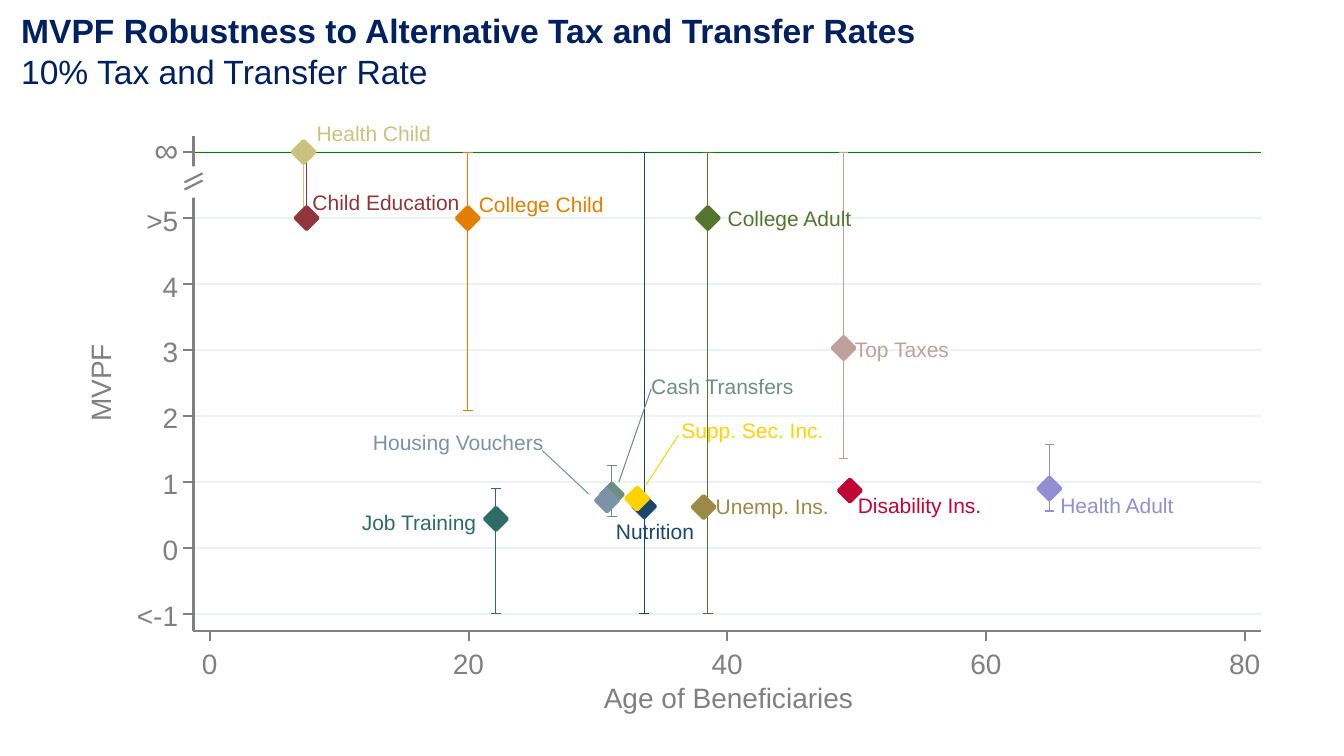
from dataclasses import dataclass
from typing import Any, Optional

from lxml import etree
from pptx import Presentation
from pptx.dml.color import RGBColor
from pptx.enum.shapes import MSO_CONNECTOR, MSO_SHAPE
from pptx.enum.text import MSO_AUTO_SIZE
from pptx.oxml.ns import qn
from pptx.util import Pt

LINE = MSO_CONNECTOR.STRAIGHT
RECT, DIAMOND = MSO_SHAPE.RECTANGLE, MSO_SHAPE.DIAMOND
GROW = MSO_AUTO_SIZE.SHAPE_TO_FIT_TEXT


@dataclass(frozen=True)
class Theme:
    font: str = "Arial"
    axis: str = "808080"
    grid: str = "EAF2F3"
    top: str = "008000"
    title: str = "002060"
    back: str = "FFFFFF"
    head: float = 24
    tick: float = 20
    note: float = 15
    thin: float = 0.75
    mid: float = 1.5
    edge: float = 2.5
    wide: float = 3


@dataclass(frozen=True)
class Policy:
    name: str
    color: str
    age: float
    value: float
    low: float
    high: float
    left: float  # label box
    top: float
    width: float
    lead: Optional[tuple[float, float, float, float]] = None


T = Theme()
FRAME = {"margin_left": 0, "margin_right": 0, "margin_top": 0,
         "margin_bottom": 0, "auto_size": GROW}

# Plot frame and scales, in points
LEFT, RIGHT, TOP, BASE = 138.2, 900.7, 97.2, 450.5
ZERO_X, STEP_X = 149.9, 9.24
ZERO_Y, STEP_Y = 391.4, 47.13
TICK, CAP, MARK = 7.5, 3.4, 16.1
ROWS = {-1: "<-1", 0: "0", 1: "1", 2: "2", 3: "3", 4: "4", 5: ">5", 6: ""}

POLICIES = [
    Policy("Cash Transfers", "6E8E84", 31.08, 0.81, 0.47, 1.25,
           465.1, 267.1, 114.5, (442.1, 344.2, 465.1, 277.9)),
    Policy("Child Education", "90353B", 7.48, 5, 5, 6, 223.2, 135.4, 116.6),
    Policy("College Adult", "55752F", 38.5, 5, -1, 6, 519.8, 146.9, 100.8),
    Policy("College Child", "E37E00", 19.94, 5, 2.09, 6, 342, 136.8, 100.8),
    Policy("Disability Ins.", "C10534", 49.47, 0.87, 0.84, 0.9,
           612.7, 352.1, 100.1),
    Policy("Health Adult", "938DD2", 64.9, 0.9, 0.56, 1.57,
           757.4, 352.1, 92.2),
    Policy("Health Child", "CAC27E", 7.25, 6, 5, 6, 226.1, 86.4, 92.2),
    Policy("Housing Vouchers", "7B92A8", 30.7, 0.72, 0.69, 0.76,
           266.4, 306.7, 135.4, (387.4, 321.8, 420.5, 352.8)),
    Policy("Job Training", "2D6D66", 22.12, 0.44, -1, 0.9,
           258.5, 364.3, 93.6),
    Policy("Nutrition", "1A476F", 33.57, 0.63, -1, 6, 439.9, 370.1, 65.5),
    Policy("Supp. Sec. Inc.", "FFD200", 33.03, 0.75, 0.63, 0.85,
           486.7, 298.1, 113, (461.5, 346.3, 484.6, 311)),
    Policy("Top Taxes", "BFA19C", 49, 3.03, 1.36, 6, 610.6, 240.5, 80.6),
    Policy("Unemp. Ins.", "9C8847", 38.17, 0.62, 0.53, 0.75,
           511.2, 352.8, 92.2),
]


def px(age: float) -> float:
    return ZERO_X + STEP_X * age


def py(value: float) -> float:
    return ZERO_Y - STEP_Y * value


def line(host: Any, x1: float, y1: float, x2: float, y2: float,
         color: str, width: float) -> None:
    item = host.add_connector(LINE, Pt(x1), Pt(y1), Pt(x2), Pt(y2))
    item.line.color.rgb = RGBColor.from_string(color)
    item.line.width = Pt(width)
    etree.SubElement(item._element.spPr, qn("a:effectLst"))


def shape(host: Any, kind: Any, x: float, y: float, w: float, h: float,
          color: str, edge: float = 0) -> None:
    item = host.add_shape(kind, Pt(x), Pt(y), Pt(w), Pt(h))
    item.shadow.inherit = False
    item.fill.solid()
    item.fill.fore_color.rgb = RGBColor.from_string(color)
    if edge:
        item.line.color.rgb = RGBColor.from_string(color)
        item.line.width = Pt(edge)
    else:
        item.line.fill.background()


def text(host: Any, rows: list[str], x: float, y: float, w: float, h: float,
         size: float, color: str, wrap: bool = False,
         strong: bool = False, turn: float = 0) -> None:
    """Write one paragraph per row; strong makes the first row bold."""
    box = host.add_textbox(Pt(x), Pt(y), Pt(w), Pt(h))
    box.rotation = turn
    frame = box.text_frame
    for key, val in {**FRAME, "word_wrap": wrap}.items():
        setattr(frame, key, val)
    for i, row in enumerate(rows):
        para = frame.paragraphs[0] if i == 0 else frame.add_paragraph()
        run = para.add_run()
        run.text = row
        style = {"name": T.font, "size": Pt(size), "bold": strong and i == 0}
        for key, val in style.items():
            setattr(run.font, key, val)
        run.font.color.rgb = RGBColor.from_string(color)


def whisker(host: Any, item: Policy) -> None:
    x, low, high = px(item.age), py(item.low), py(item.high)
    line(host, x, low, x, high, item.color, T.thin)
    for y in (high, low):
        line(host, x - CAP, y, x + CAP, y, item.color, T.thin)


def axes(host: Any) -> None:
    line(host, LEFT, BASE, LEFT, TOP, T.axis, T.mid)
    for row, name in ROWS.items():
        y = py(row)
        line(host, LEFT, y, LEFT - TICK, y, T.axis, T.mid)
        if name:
            wide = {1: 20.2, 2: 31.8, 3: 38.5}[len(name)]
            text(host, [name], 136.3 - wide, y - 10.7, wide, 28,
                 T.tick, T.axis)
    text(host, ["MVPF"], 41, 254.9, 64.8, 28, T.tick, T.axis, turn=270)
    line(host, LEFT, BASE, RIGHT, BASE, T.axis, T.mid)
    for age in range(0, 81, 20):
        x, name = px(age), str(age)
        line(host, x, BASE, x, BASE + TICK, T.axis, T.mid)
        text(host, [name], x - 5.6 * len(name), 461.5, 8 + 12 * len(name),
             28, T.tick, T.axis)
    text(host, ["Age of Beneficiaries"], 431.3, 486, 188.6, 28,
         T.tick, T.axis)


def gap(host: Any) -> None:
    """Break in the value axis, with the infinity label above it."""
    part = host.add_group_shape().shapes
    shape(part, RECT, 115.9, 118.8, 41.8, 22.3, T.back)
    line(part, LEFT, 131.8, LEFT, 127.4, T.back, T.wide)
    for y in (130.3, 135.4):
        line(part, 131.8, y, 144.7, y - 6.5, T.axis, T.mid)
    text(part, ["∞"], 110.2, 92.2, 17.3, 28.8, T.head, T.axis)


def main() -> None:
    deck = Presentation()
    deck.slide_width, deck.slide_height = Pt(960), Pt(540)
    host = deck.slides.add_slide(deck.slide_layouts[6]).shapes

    # Grid
    for row in ROWS:
        line(host, LEFT, py(row), RIGHT, py(row), T.grid, T.mid)
    line(host, LEFT, py(6), RIGHT, py(6), T.top, T.thin)

    # Ranges, then markers above them
    for item in POLICIES:
        whisker(host, item)
    for item in POLICIES:
        shape(host, DIAMOND, px(item.age) - MARK / 2,
              py(item.value) - MARK / 2, MARK, MARK, item.color, T.edge)

    # Axes and title
    axes(host)
    text(host, ["MVPF Robustness to Alternative Tax and Transfer Rates",
                "10% Tax and Transfer Rate"],
         15.1, 7.2, 836.6, 58.3, T.head, T.title, wrap=True, strong=True)
    gap(host)

    # Policy names and leader lines
    for item in POLICIES:
        if item.lead:
            line(host, *item.lead, item.color, T.thin)
        text(host, [item.name], item.left, item.top, item.width, 21.6,
             T.note, item.color)

    deck.save("out.pptx")


if __name__ == "__main__":
    main()
